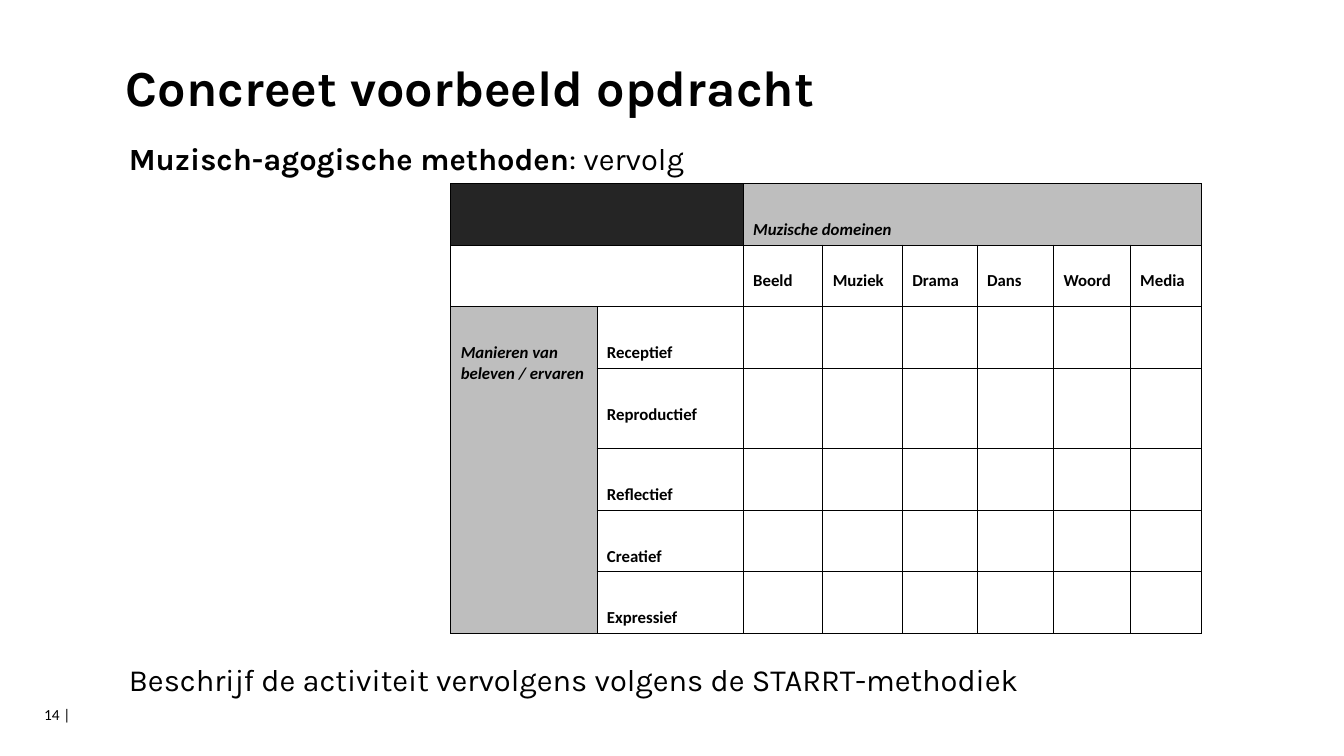
from dataclasses import dataclass

from lxml.etree import SubElement
from pptx import Presentation
from pptx.dml.color import RGBColor
from pptx.oxml.ns import qn
from pptx.util import Inches, Pt

COLORS = {"text": "000000", "line": "000000", "dark": "252525", "grey": "BEBEBE"}
HEADING_FONT, TABLE_FONT = "Karla", "Calibri"

DOMAINS = ["Beeld", "Muziek", "Drama", "Dans", "Woord", "Media"]
MODES = ["Receptief", "Reproductief", "Reflectief", "Creatief", "Expressief"]
COL_WIDTHS = [1.45, 1.45, 0.79, 0.79, 0.74, 0.76, 0.76, 0.71]
ROW_HEIGHTS = [0.61, 0.61, 0.61, 0.8, 0.61, 0.61, 0.61]
LABEL_TOP, DOMAIN_TOP = 0.36, 0.25


@dataclass
class Label:
    row: int
    col: int
    text: str
    top: float = LABEL_TOP
    italic: bool = False


@dataclass
class Block:
    """A merged range of cells, from its first to its last cell."""
    first: tuple[int, int]
    last: tuple[int, int]
    fill: str = ""


BLOCKS = [
    Block((0, 0), (0, 1), "dark"),
    Block((0, 2), (0, 7), "grey"),
    Block((1, 0), (1, 1)),
    Block((2, 0), (6, 0), "grey"),
]
LABELS = [
    Label(0, 2, "Muzische domeinen", italic=True),
    Label(2, 0, "Manieren van beleven / ervaren", italic=True),
    *[Label(1, c, name, DOMAIN_TOP) for c, name in enumerate(DOMAINS, 2)],
    *[Label(r, 1, name) for r, name in enumerate(MODES, 2)],
]


def add_text(p, text: str, *, size: float, font: str,
             bold: bool = False, italic: bool = False) -> None:
    r = p.add_run()
    r.text = text
    r.font.name, r.font.size = font, Pt(size)
    r.font.bold, r.font.italic = bold, italic
    r.font.color.rgb = RGBColor.from_string(COLORS["text"])


def add_box(s, left: float, top: float, width: float, height: float):
    tf = s.shapes.add_textbox(Inches(left), Inches(top), Inches(width), Inches(height)).text_frame
    tf.word_wrap = True
    return tf


def set_borders(cell, width: float = 0.6) -> None:
    tcPr = cell._tc.get_or_add_tcPr()
    for side in ("a:lnL", "a:lnR", "a:lnT", "a:lnB"):
        ln = SubElement(tcPr, qn(side), w=str(Pt(width)))
        SubElement(SubElement(ln, qn("a:solidFill")), qn("a:srgbClr"), val=COLORS["line"])


def add_grid(s, left: float, top: float) -> None:
    table = s.shapes.add_table(
        len(ROW_HEIGHTS), len(COL_WIDTHS), Inches(left), Inches(top),
        Inches(sum(COL_WIDTHS)), Inches(sum(ROW_HEIGHTS))).table
    table.first_row = table.horz_banding = False
    for col, width in zip(table.columns, COL_WIDTHS):
        col.width = Inches(width)
    for row, height in zip(table.rows, ROW_HEIGHTS):
        row.height = Inches(height)
    for cell in table.iter_cells():
        set_borders(cell)
        cell.fill.background()

    for block in BLOCKS:
        cell = table.cell(*block.first)
        cell.merge(table.cell(*block.last))
        if block.fill:
            cell.fill.solid()
            cell.fill.fore_color.rgb = RGBColor.from_string(COLORS[block.fill])

    for label in LABELS:
        cell = table.cell(label.row, label.col)
        cell.margin_top = Inches(label.top)
        add_text(cell.text_frame.paragraphs[0], label.text, size=12, font=TABLE_FONT,
                 bold=True, italic=label.italic)


def main() -> None:
    prs = Presentation()
    prs.slide_width, prs.slide_height = Inches(13.33), Inches(7.5)
    s = prs.slides.add_slide(prs.slide_layouts[6])

    # Body: subtitle above the table, closing line below it
    tf = add_box(s, 1.18, 1.38, 11.73, 5.65)
    p = tf.paragraphs[0]
    p.line_spacing = 0.9
    add_text(p, "Muzisch-agogische methoden", size=22, font=HEADING_FONT, bold=True)
    add_text(p, ": vervolg", size=22, font=HEADING_FONT)
    p = tf.add_paragraph()
    p.line_spacing, p.space_before = 0.9, Pt(348)
    add_text(p, "Beschrijf de activiteit vervolgens volgens de STARRT-methodiek",
             size=22, font=HEADING_FONT)

    # Title
    tf = add_box(s, 1.18, 0.58, 11.73, 0.95)
    tf.margin_left = Inches(0.07)
    p = tf.paragraphs[0]
    p.line_spacing = 0.9
    add_text(p, "Concreet voorbeeld opdracht", size=36, font=HEADING_FONT, bold=True)

    # Page number
    tf = add_box(s, 0.34, 6.95, 0.84, 0.4)
    add_text(tf.paragraphs[0], "14 |", size=11, font=TABLE_FONT)

    # Table of domains and modes
    add_grid(s, 4.47, 1.82)

    prs.save("out.pptx")


if __name__ == "__main__":
    main()
